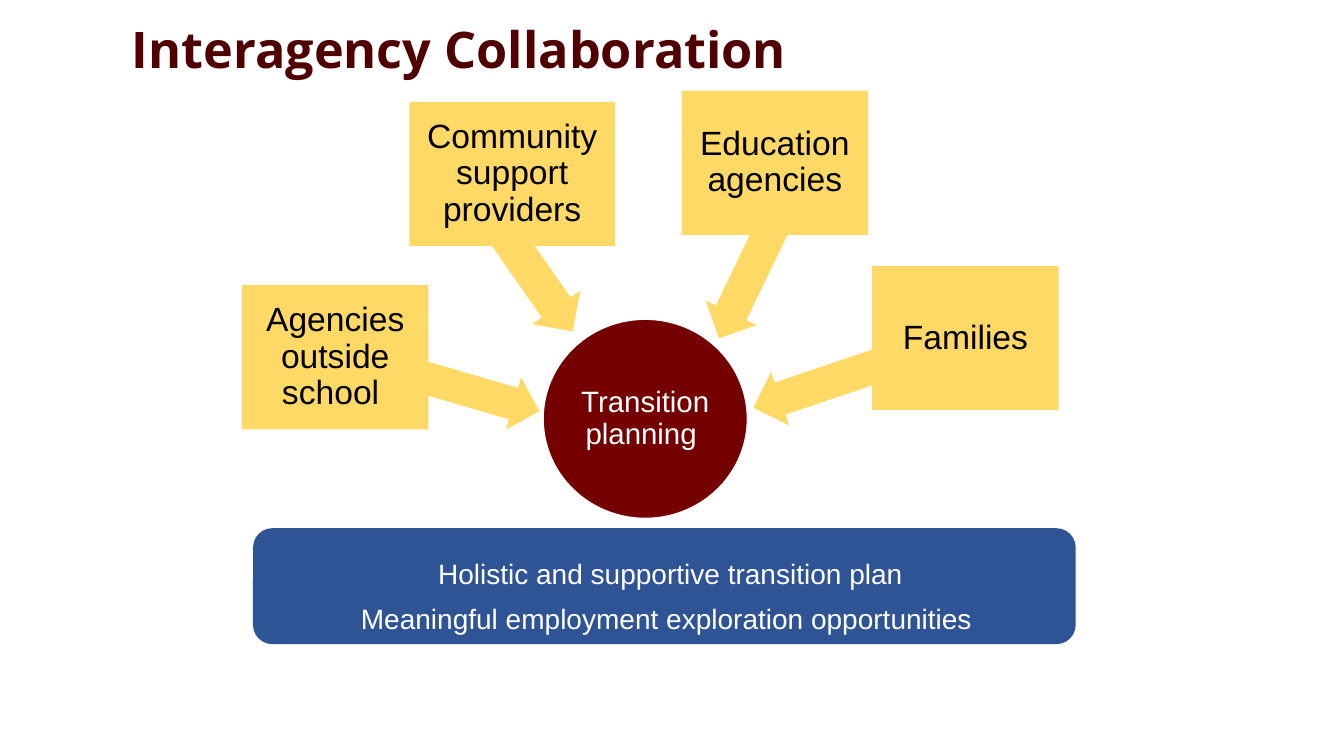
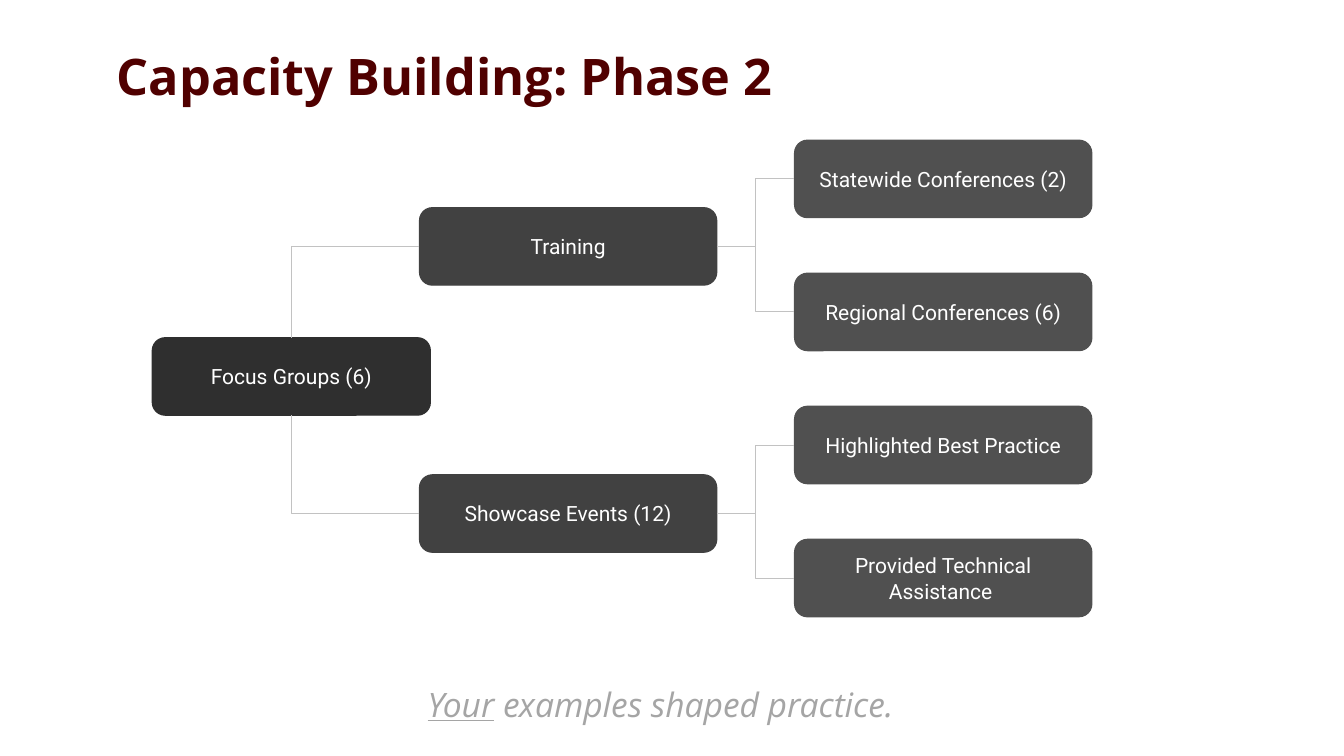
from pptx import Presentation
from pptx.dml.color import RGBColor
from pptx.enum.shapes import MSO_CONNECTOR, MSO_SHAPE
from pptx.enum.text import MSO_ANCHOR, PP_ALIGN
from pptx.oxml.ns import qn
from pptx.util import Inches, Pt
from lxml import etree

MAROON = RGBColor(0x50, 0x00, 0x00)
HUB_RED = RGBColor(0x74, 0x00, 0x00)
GOLD = RGBColor(0xFF, 0xD9, 0x66)
BLUE = RGBColor(0x2F, 0x54, 0x96)
WHITE = RGBColor(0xFF, 0xFF, 0xFF)
BLACK = RGBColor(0x00, 0x00, 0x00)
GREY = RGBColor(0xA5, 0xA5, 0xA5)
RULE = RGBColor(0xC2, 0xC2, 0xC2)
LEVELS = [RGBColor(0x2F, 0x2F, 0x2F), RGBColor(0x41, 0x41, 0x41), RGBColor(0x50, 0x50, 0x50)]

BOX_H = 1.43
PARTNERS = [
    ("Agencies outside school ", (0, 1.93, 1.85), (1.56, 2.71, 1.42, 0.54), 196.3),
    ("Community support providers", (1.66, 0.11, 2.04), (2.08, 1.47, 1.53, 0.58), 235.2),
    ("Education\nagencies", (4.36, 0, 1.85), (4.28, 1.46, 1.59, 0.56), 295.7),
    ("Families", (6.25, 1.74, 1.85), (5.03, 2.61, 1.59, 0.56), 341.3),
]
OUTCOMES = "Holistic and supportive transition plan\nMeaningful employment exploration opportunities "

ROOT = "Focus Groups (6)"
BRANCHES = [
    ("Training", ["Statewide Conferences (2)", "Regional Conferences (6)"]),
    ("Showcase Events (12)", ["Highlighted Best Practice", "Provided Technical Assistance "]),
]
NODE_H = 0.77


def write(sp, text, size, font, color, align=PP_ALIGN.CENTER, spacing=0.9, gap=0,
          insets=(0.1, 0.05, 0.1, 0.05)):
    """Write one paragraph per line of text, anchored to the middle."""
    tf = sp.text_frame
    tf.word_wrap = True
    tf.vertical_anchor = MSO_ANCHOR.MIDDLE
    tf.margin_left, tf.margin_top, tf.margin_right, tf.margin_bottom = map(Inches, insets)
    for i, line in enumerate(text.split("\n")):
        p = tf.add_paragraph() if i else tf.paragraphs[0]
        p.add_run().text = line
        p.alignment = align
        p.line_spacing = spacing
        if i and gap:
            p.space_before = Pt(gap)
        p.font.size, p.font.name = Pt(size), font
        p.font.color.rgb = color
    return tf


def add_block(s, kind, box, fill, line=None, width=0.75):
    """Add a flat preset shape filling the box."""
    sp = s.shapes.add_shape(kind, *map(Inches, box))
    sp.shadow.inherit = False
    sp.fill.solid()
    sp.fill.fore_color.rgb = fill
    if line is None:
        sp.line.fill.background()
    else:
        sp.line.color.rgb, sp.line.width = line, Pt(width)
    return sp


def add_title(s, text, box):
    """Add the shared title style."""
    sp = s.shapes.add_textbox(*map(Inches, box))
    tf = write(sp, text, 36, "Open Sans", MAROON, PP_ALIGN.LEFT)
    tf.paragraphs[0].font.bold = True


def add_partner_wheel(s, left, top):
    """Place the hub with its partners and arrows from the given corner."""
    hub = add_block(s, MSO_SHAPE.OVAL, (left + 2.98, top + 2.26, 2.04, 1.99), HUB_RED, WHITE, 2)
    write(hub, "Transition planning ", 21, "Arial", WHITE, insets=(0.01,) * 4)
    for label, (x, y, w), (ax, ay, aw, ah), angle in PARTNERS:
        arrow = add_block(s, MSO_SHAPE.LEFT_ARROW, (left + ax, top + ay, aw, ah), GOLD)
        arrow.adjustments[0] = 0.6
        arrow.rotation = angle
        sp = add_block(s, MSO_SHAPE.RECTANGLE, (left + x, top + y, w, BOX_H), GOLD)
        write(sp, label, 24, "Arial", BLACK, insets=(0.05,) * 4)


def add_outcome_bar(s, box):
    """Add the rounded bar that lists the outcomes."""
    sp = add_block(s, MSO_SHAPE.ROUNDED_RECTANGLE, box, BLUE)
    write(sp, OUTCOMES, 20, "Arial", WHITE, gap=10, insets=(0.22, 0.28, 0.1, 0.05))


def add_node(s, text, left, top, width, level):
    """Add one tree node shaded by its level."""
    color = LEVELS[level]
    sp = add_block(s, MSO_SHAPE.ROUNDED_RECTANGLE, (left, top, width, NODE_H), color, color)
    write(sp, text, 15, "Roboto", WHITE, spacing=1.0, insets=(0.13,) * 4)
    return sp


def link(s, start, start_site, end, end_site, preset="bentConnector3"):
    """Join two nodes with a thin elbow line."""
    c = s.shapes.add_connector(MSO_CONNECTOR.ELBOW, 0, 0, 0, 0)
    c.begin_connect(start, start_site)
    c.end_connect(end, end_site)
    c.line.color.rgb, c.line.width = RULE, Pt(0.75)
    spPr = c._element.spPr
    spPr.find(qn("a:prstGeom")).set("prst", preset)
    etree.SubElement(spPr, qn("a:effectLst"))


def add_tree(s, left, top):
    """Place the tree of focus groups, branches and leaves from the given corner."""
    top_site, left_site, bottom_site, right_site = range(4)
    root = add_node(s, ROOT, left, top + 1.96, 2.76, 0)
    for i, (name, leaves) in enumerate(BRANCHES):
        branch = add_node(s, name, left + 2.65, top + 0.67 + 2.65 * i, 2.95, 1)
        link(s, branch, left_site, root, bottom_site if i else top_site, "bentConnector2")
        for j, leaf in enumerate(leaves, len(leaves) * i):
            node = add_node(s, leaf, left + 6.37, top + 1.32 * j, 2.95, 2)
            link(s, branch, right_site, node, left_site)


def add_closing_line(s, box):
    """Add the italic closing line with its first word underlined."""
    sp = s.shapes.add_textbox(*map(Inches, box))
    p = write(sp, "Your", 24, "Open Sans", GREY).paragraphs[0]
    p.font.italic = True
    p.runs[0].font.underline = True
    p.add_run().text = " examples shaped practice. "


def collaboration_slide(prs):
    """Build the interagency collaboration slide."""
    s = prs.slides.add_slide(prs.slide_layouts[6])
    add_title(s, "Interagency Collaboration", (1.21, 0.14, 11.79, 0.76))
    add_partner_wheel(s, 2.4, 0.9)
    add_outcome_bar(s, (2.51, 5.24, 8.16, 1.15))


def capacity_slide(prs):
    """Build the capacity building slide."""
    s = prs.slides.add_slide(prs.slide_layouts[6])
    add_title(s, "Capacity Building: Phase 2", (1.06, 0.06, 11.79, 1.45))
    add_tree(s, 1.51, 1.39)
    add_closing_line(s, (2.35, 6.81, 8.49, 0.39))


def main():
    """Build and save the presentation."""
    prs = Presentation()
    prs.slide_width, prs.slide_height = Inches(13.33), Inches(7.5)
    collaboration_slide(prs)
    capacity_slide(prs)
    prs.save("out.pptx")


if __name__ == "__main__":
    main()
